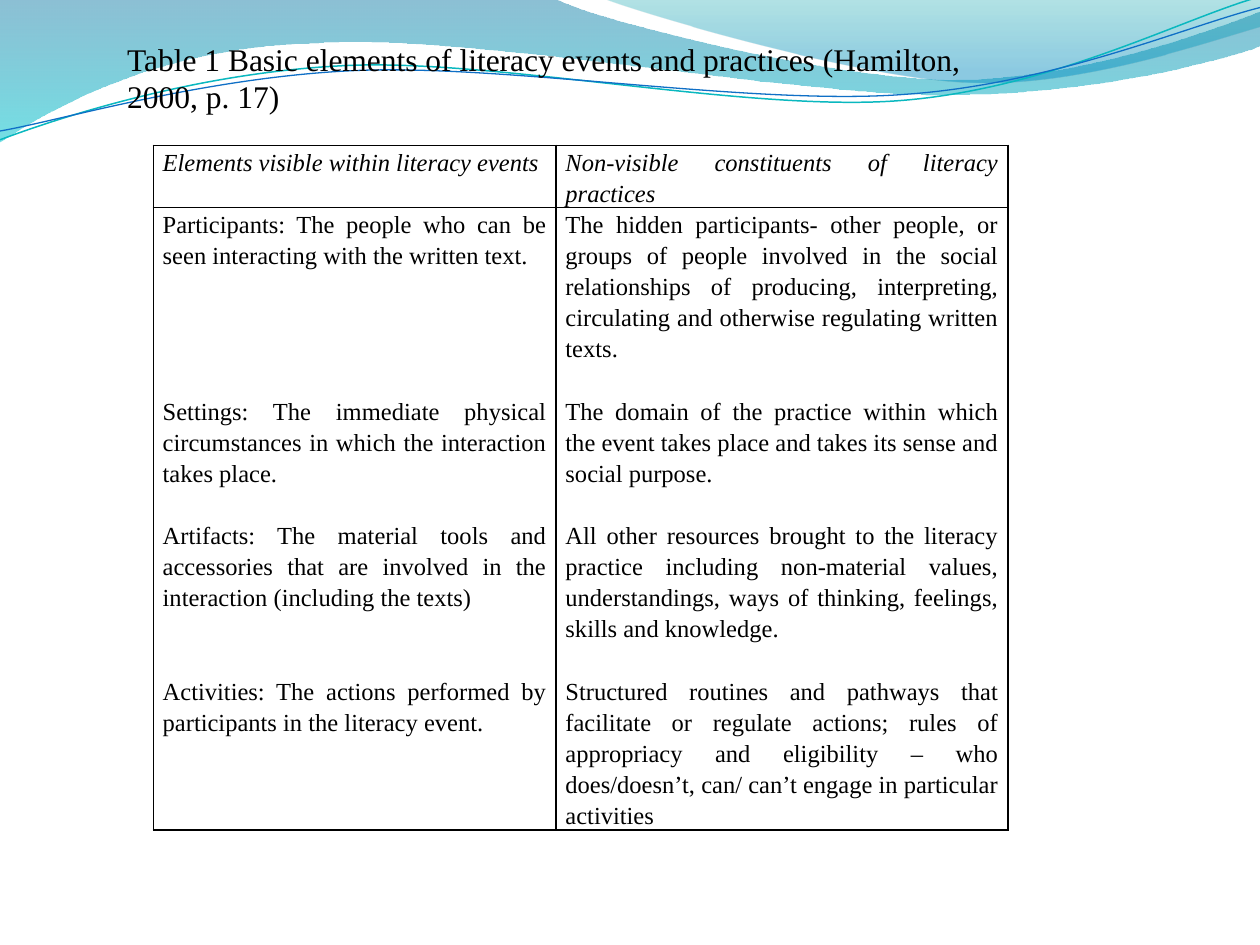
from lxml.etree import SubElement
from pptx import Presentation
from pptx.dml.color import RGBColor
from pptx.enum.text import MSO_ANCHOR, MSO_AUTO_SIZE, PP_ALIGN
from pptx.oxml.ns import qn
from pptx.util import Cm, Pt

BLACK = RGBColor(0x00, 0x00, 0x00)
WHITE = RGBColor(0xFF, 0xFF, 0xFF)
DEEP_BLUE = RGBColor(0x00, 0x74, 0xA1)
CYAN = RGBColor(0x00, 0xC6, 0xCF)
TEAL = RGBColor(0x00, 0xA1, 0xA9)
SKY = RGBColor(0x00, 0x8B, 0xBF)
LINE_TEAL = RGBColor(0x0A, 0xB8, 0xBF)
LINE_BLUE = RGBColor(0x0F, 0x6F, 0xC6)
FONT = "Times New Roman"
UNIT = 2.54  # cm per unit of the wave outlines
LINE_PITCH = 17.8  # pt per table text line


def add_wave(shapes, start, segments, closed):
    """Draw a path of line ends (2 numbers) and cubic curves (6 numbers)."""
    pts = [start] + [seg[i:i + 2] for seg in segments for i in range(0, len(seg), 2)]
    pts = [(Cm(x * UNIT), Cm(y * UNIT)) for x, y in pts]
    builder = shapes.build_freeform(*pts[0])
    builder.add_line_segments(pts[1:], close=closed)
    s = builder.convert_to_shape()
    s.shadow.inherit = False
    # Join each curve's three points into one cubic segment
    steps = iter(list(s._element.iter(qn("a:lnTo"))))
    for seg in segments:
        first = next(steps)
        if len(seg) == 6:
            first.tag = qn("a:cubicBezTo")
            for step in (next(steps), next(steps)):
                first.append(step[0])
                step.getparent().remove(step)
    return s


def format_text(p, size, italic=False):
    for r in p.runs:
        r.font.name = FONT
        r.font.size = Pt(size)
        r.font.italic = italic
        r.font.color.rgb = BLACK


prs = Presentation()
prs.slide_width, prs.slide_height = Cm(25.4), Cm(19.05)
slide = prs.slides.add_slide(prs.slide_layouts[5])
shapes = slide.shapes

# Filled waves: start, segments, gradient stops (position, colour, opacity %)
bands = [
    ((0, 0),
     [(4.4, -0.01), (4.76, 0.17, 6.64, 0.63, 7.58, 0.63),
      (8.53, 0.63, 9.58, 0.26, 10, 0.09), (10.01, 0.36),
      (9.83, 0.44, 8.7, 0.76, 7.46, 0.75),
      (6.22, 0.75, 3.82, 0.28, 2.57, 0.34),
      (1.29, 0.36, 0.46, 0.83, -0.01, 1.13)],
     [(0, DEEP_BLUE, 45), (1, CYAN, 55)]),
    ((4.79, -0.01),
     [(5.09, 0.11, 6.82, 0.62, 7.69, 0.65),
      (8.56, 0.69, 9.61, 0.32, 10, 0.21), (10, 0)],
     [(0, TEAL, 30), (0.8, SKY, 45)]),
]
for start, segments, stops in bands:
    s = add_wave(shapes, start, segments, True)
    s.line.fill.background()
    s.fill.gradient()
    s.fill.gradient_angle = 270
    for stop, (position, color, _) in zip(s.fill.gradient_stops, stops):
        stop.position = position
        stop.color.rgb = color
    for clr, (_, _, opacity) in zip(s._element.spPr.iter(qn("a:srgbClr")), stops):
        SubElement(clr, qn("a:alpha"), val=str(opacity * 1000))

# Thin wave lines
strands = [
    ((0, 1.11),
     [(0.48, 0.93, 1.58, 0.57, 2.77, 0.52), (3.95, 0.47, 5.93, 0.89, 7.13, 0.8),
      (8.33, 0.71, 9.38, 0.15, 9.98, -0.02)], LINE_TEAL, 0.85),
    ((0, 1.04),
     [(0.47, 0.96, 1.64, 0.61, 2.83, 0.56), (4.03, 0.51, 5.97, 0.84, 7.17, 0.75),
      (8.36, 0.67, 9.41, 0.21, 10, 0.06)], LINE_BLUE, 0.75),
]
for start, segments, color, width in strands:
    s = add_wave(shapes, start, segments, False)
    s.fill.background()
    s.line.color.rgb = color
    s.line.width = Pt(width)

# Table cells: paragraphs as (empty lines before, text)
rows = [
    [[(0, "Elements visible within literacy events")],
     [(0, "Non-visible constituents of literacy practices")]],
    [[(0, "Participants: The people who can be seen interacting with the written text."),
      (4, "Settings: The immediate physical circumstances in which the interaction takes place."),
      (1, "Artifacts: The material tools and accessories that are involved in the "
          "interaction (including the texts)"),
      (2, "Activities: The actions performed by participants in the literacy event.")],
     [(0, "The hidden participants- other people, or groups of people involved in the "
          "social relationships of producing, interpreting, circulating and otherwise "
          "regulating written texts."),
      (1, "The domain of the practice within which the event takes place and takes its "
          "sense and social purpose."),
      (1, "All other resources brought to the literacy practice including non-material "
          "values, understandings, ways of thinking, feelings, skills and knowledge."),
      (1, "Structured routines and pathways that facilitate or regulate actions; rules of "
          "appropriacy and eligibility – who does/doesn’t, can/ can’t engage in "
          "particular activities")]],
]
frame = shapes.add_table(2, 2, Cm(3.09), Cm(2.93), Cm(17.23), Cm(14.99))
table = frame.table
table.first_row = table.horz_banding = False
for col, width in zip(table.columns, (8.12, 9.11)):
    col.width = Cm(width)
for row, height in zip(table.rows, (0.71, 12.22)):
    row.height = Cm(height)
frame.height = Cm(14.99)
for i, row in enumerate(rows):
    for j, paragraphs in enumerate(row):
        cell = table.cell(i, j)
        cell.margin_left = cell.margin_right = Cm(0.19)
        cell.margin_top = cell.margin_bottom = 0
        tc_pr = cell._tc.get_or_add_tcPr()
        for side in ("lnL", "lnR", "lnT", "lnB"):
            ln = SubElement(tc_pr, qn(f"a:{side}"), w=str(Pt(1)))
            SubElement(SubElement(ln, qn("a:solidFill")), qn("a:srgbClr"), val=str(BLACK))
        cell.fill.solid()
        cell.fill.fore_color.rgb = WHITE
        tf = cell.text_frame
        tf.text = "\n".join(text for _, text in paragraphs)
        for p, (gap, _) in zip(tf.paragraphs, paragraphs):
            p.alignment = PP_ALIGN.JUSTIFY
            p.line_spacing = 1.15
            p.space_before = Pt(gap * LINE_PITCH)
            format_text(p, 14, italic=(i == 0))

# Title, in front of the waves
title = shapes.title
title.left, title.top, title.width, title.height = Cm(2.31), Cm(0.66), Cm(18.01), Cm(1.8)
tf = title.text_frame
tf.text = "Table 1 Basic elements of literacy events and practices (Hamilton, 2000, p. 17)"
tf.word_wrap = True
tf.auto_size = MSO_AUTO_SIZE.NONE
tf.vertical_anchor = MSO_ANCHOR.MIDDLE
tf.paragraphs[0].alignment = PP_ALIGN.LEFT
format_text(tf.paragraphs[0], 18)
shapes._spTree.append(title._element)

prs.save("out.pptx")
